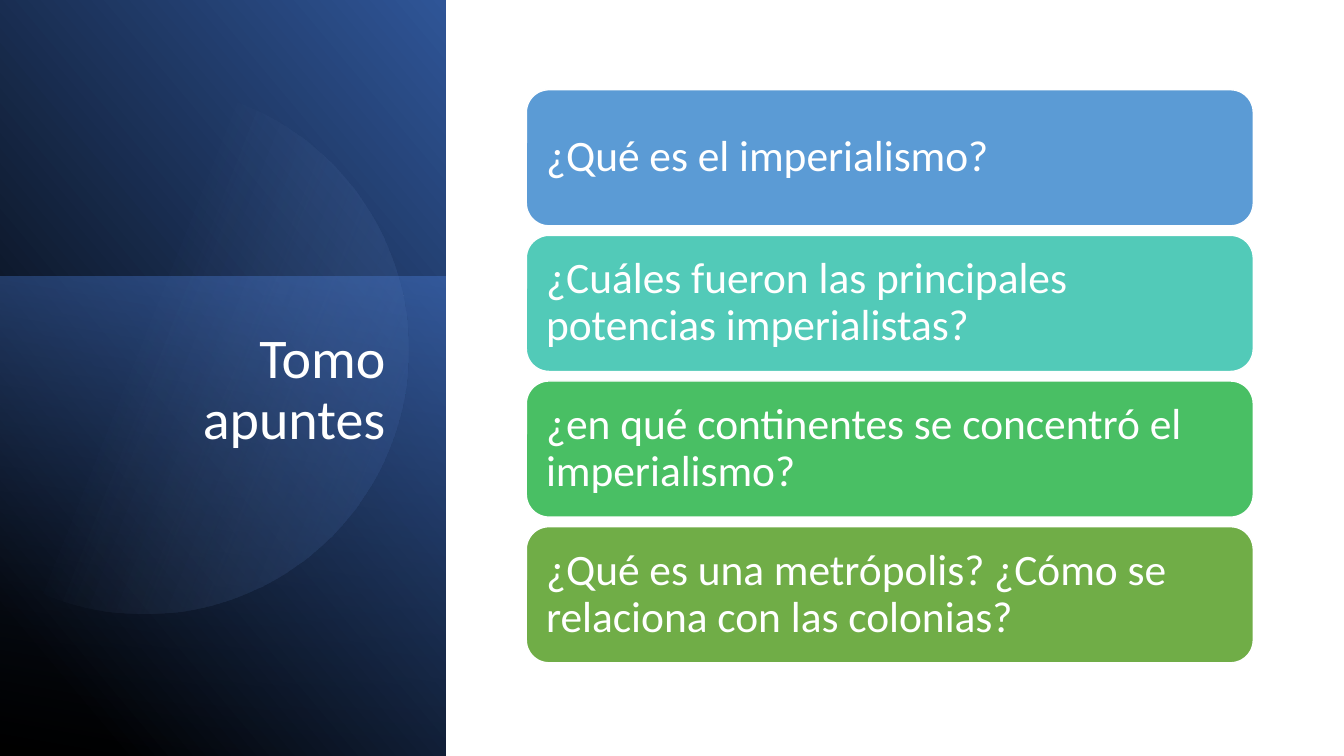
import math

import pptx
import pptx.dml.color
import pptx.enum.shapes
import pptx.enum.text
import pptx.oxml.ns
import pptx.util
from pptx.util import Inches

SHAPES = pptx.enum.shapes.MSO_SHAPE
ALIGN = pptx.enum.text.PP_ALIGN
ANCHOR = pptx.enum.text.MSO_ANCHOR
FONT = "Calibri"

QUESTIONS = [
    ("¿Qué es el imperialismo?", "5B9BD5"),
    ("¿Cuáles fueron las principales potencias imperialistas?", "52CAB8"),
    ("¿en qué continentes se concentró el imperialismo?", "49BF64"),
    ("¿Qué es una metrópolis? ¿Cómo se relaciona con las colonias?", "70AD47"),
]


def rgb(hex_color):
    return pptx.dml.color.RGBColor.from_string(hex_color)


def fill_gradient(shape, stops, clockwise_angle):
    """Two stops, each (position %, colour, opacity %)."""
    shape.shadow.inherit = False
    shape.line.fill.background()
    shape.fill.gradient()
    shape.fill.gradient_angle = 360 - clockwise_angle
    for stop, (position, color, _) in zip(shape.fill.gradient_stops, stops):
        stop.position = position / 100
        stop.color.rgb = rgb(color)
    colors = shape._element.spPr.iter(pptx.oxml.ns.qn("a:srgbClr"))
    for color_element, (_, _, opacity) in zip(list(colors), stops):
        if opacity < 100:
            alpha = pptx.oxml.parse_xml(
                f'<a:alpha {pptx.oxml.ns.nsdecls("a")} val="{opacity * 1000}"/>')
            color_element.append(alpha)


def add_panel(slide, box, rotation, stops, angle, flipped=False):
    panel = slide.shapes.add_shape(SHAPES.RECTANGLE, *map(Inches, box))
    panel.rotation = rotation
    if flipped:
        panel._element.spPr.xfrm.set("flipH", "1")
    fill_gradient(panel, stops, angle)


def add_cut_disc(slide, center_x, center_y, radius, stops, angle, steps=120):
    """Disc cut off by the left edge of the slide."""
    reach = math.acos(-center_x / radius)
    points = []
    for step in range(steps + 1):
        turn = reach * (2 * step / steps - 1)
        points.append((Inches(center_x + radius * math.cos(turn)),
                       Inches(center_y + radius * math.sin(turn))))
    outline = slide.shapes.build_freeform(*points[0])
    outline.add_line_segments(points[1:], close=True)
    fill_gradient(outline.convert_to_shape(), stops, angle)


def write_text(shape, text, size, align, anchor):
    frame = shape.text_frame
    frame.word_wrap = True
    frame.vertical_anchor = anchor
    frame.text = text
    paragraph = frame.paragraphs[0]
    paragraph.alignment = align
    paragraph.line_spacing = 0.9
    font = paragraph.runs[0].font
    font.name = FONT
    font.size = pptx.util.Pt(size)
    font.color.rgb = rgb("FFFFFF")


def add_title(slide, text):
    title = slide.shapes.add_textbox(
        Inches(0.58), Inches(3.23), Inches(3.34), Inches(3.86))
    write_text(title, text, 40, ALIGN.RIGHT, ANCHOR.TOP)


def add_question(slide, top, question, color):
    card = slide.shapes.add_shape(
        SHAPES.ROUNDED_RECTANGLE, Inches(5.22), Inches(top), Inches(7.21), Inches(1.35))
    card.shadow.inherit = False
    card.fill.solid()
    card.fill.fore_color.rgb = rgb(color)
    card.line.color.rgb = rgb("FFFFFF")
    card.line.width = pptx.util.Pt(1)
    frame = card.text_frame
    frame.margin_left = frame.margin_right = Inches(0.13)
    frame.margin_top = frame.margin_bottom = Inches(0.13)
    write_text(card, question, 31, ALIGN.LEFT, ANCHOR.MIDDLE)


def main():
    deck = pptx.Presentation()
    deck.slide_width = Inches(13.33)
    deck.slide_height = Inches(7.5)
    slide = deck.slides.add_slide(deck.slide_layouts[6])

    # Left side: dark panel, lighter glow and translucent disc
    add_panel(slide, (-1.55, 1.55, 7.52, 4.42), 90,
              [(11, "000000", 100), (100, "2F5597", 100)], 310, flipped=True)
    add_panel(slide, (-0.17, 2.91, 4.76, 4.42), 270,
              [(0, "4472C4", 50), (100, "203864", 0)], 190)
    add_cut_disc(slide, 1.43, 3.47, 2.62,
                 [(39, "8FAADC", 0), (100, "2F5597", 26)], 21.6)
    add_title(slide, "Tomo apuntes")

    # Right side: question cards
    for index, (question, color) in enumerate(QUESTIONS):
        add_question(slide, 0.89 + 1.445 * index, question, color)

    deck.save("out.pptx")


if __name__ == "__main__":
    main()
